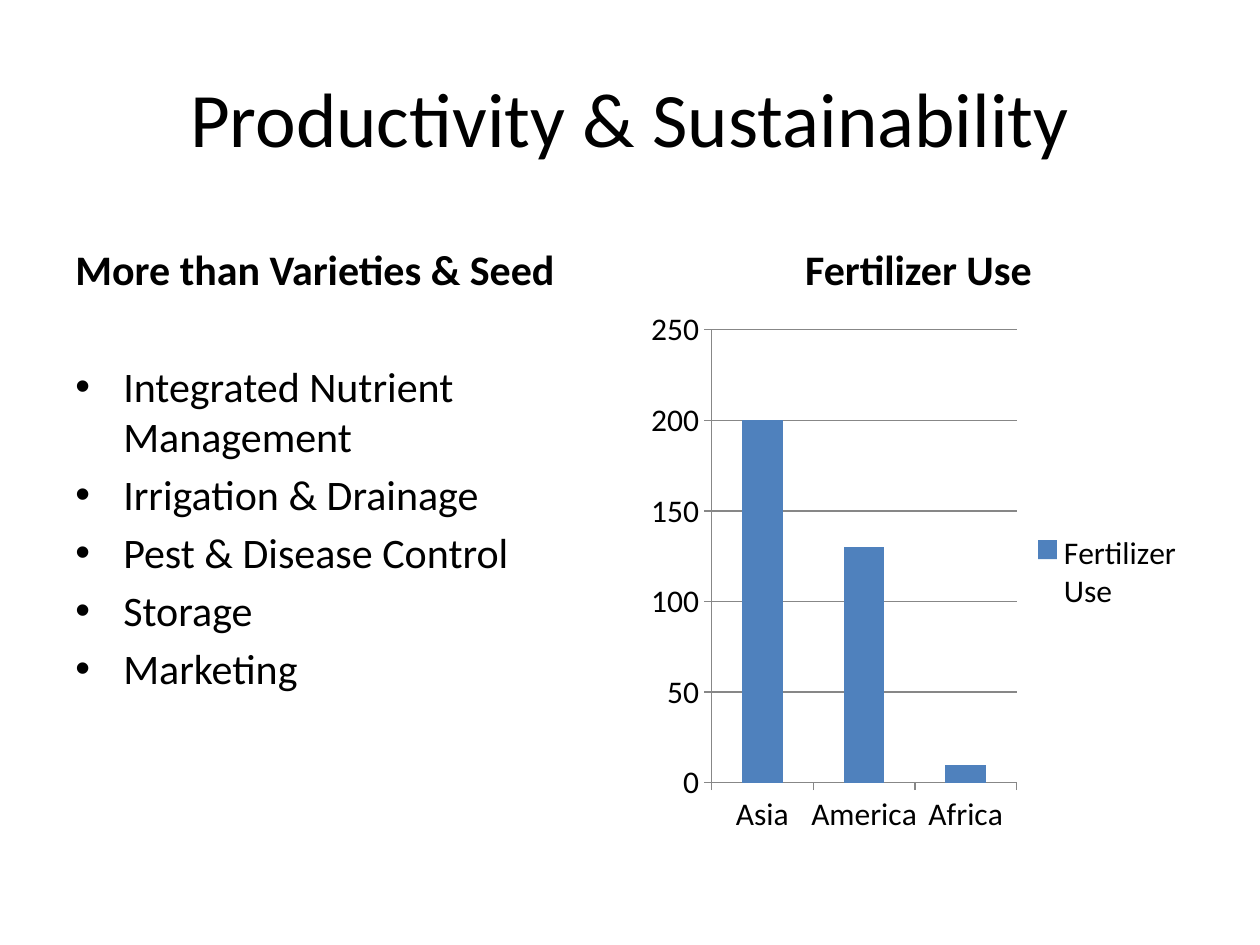
"""Build the slide on productivity and sustainability."""
from lxml import etree
from pptx import Presentation
from pptx.chart import data
from pptx.dml.color import RGBColor
from pptx.enum import chart as ce, text
from pptx.oxml.ns import qn
from pptx.util import Inches, Pt

FONT = "Calibri"
BLACK, GREY, BLUE = "000000", "878787", "4F81BD"
LEFT, RIGHT, COLUMN_WIDTH = 0.5, 5.08, 4.42
HEADING_TOP, HEADING_HEIGHT = 1.68, 0.7
CONTENT_TOP, CONTENT_HEIGHT = 2.38, 4.32
INDENT = 0.38
PRACTICES = [
    "Integrated Nutrient Management",
    "Irrigation & Drainage",
    "Pest & Disease Control",
    "Storage",
    "Marketing",
]
FERTILIZER_USE = {"Asia": 200, "America": 130, "Africa": 10}


def rgb(hex_code):
    """Return the colour for a hex string."""
    return RGBColor.from_string(hex_code)


def style_font(font, size, bold=False):
    """Apply the slide's typeface in black."""
    font.name, font.size, font.bold = FONT, Pt(size), bold
    font.color.rgb = rgb(BLACK)


def add_text(slide, box, lines, size, bold=False,
             align=text.PP_ALIGN.LEFT, anchor=text.MSO_ANCHOR.TOP):
    """Add a wrapped text box with one paragraph per line."""
    frame = slide.shapes.add_textbox(*map(Inches, box)).text_frame
    frame.word_wrap = True
    frame.vertical_anchor = anchor
    frame.text = "\n".join(lines)
    for paragraph in frame.paragraphs:
        paragraph.alignment = align
        for run in paragraph.runs:
            style_font(run.font, size, bold)
    return frame


def add_heading(slide, left, heading, align):
    """Add the bold heading of one column."""
    add_text(slide, (left, HEADING_TOP, COLUMN_WIDTH, HEADING_HEIGHT),
             [heading], 24, True, align, text.MSO_ANCHOR.BOTTOM)


def add_bullets(slide, box, items):
    """Add a bulleted list with hanging indents."""
    frame = add_text(slide, box, items, 24)
    frame.margin_top = Inches(0.48)
    for paragraph in frame.paragraphs:
        paragraph.space_before = Pt(4.3)
        properties = paragraph._p.get_or_add_pPr()
        properties.set("marL", str(Inches(INDENT)))
        properties.set("indent", str(-Inches(INDENT)))
        etree.SubElement(properties, qn("a:buFont"), typeface="Arial")
        etree.SubElement(properties, qn("a:buChar"), char="•")


def add_column_chart(slide, box, series_name, values):
    """Add a clustered column chart with a legend on the right."""
    chart_data = data.CategoryChartData()
    chart_data.categories = list(values)
    chart_data.add_series(series_name, list(values.values()))
    chart = slide.shapes.add_chart(
        ce.XL_CHART_TYPE.COLUMN_CLUSTERED, *map(Inches, box), chart_data).chart
    style_font(chart.font, 18)
    chart.has_title = False
    chart.has_legend = True
    chart.legend.position = ce.XL_LEGEND_POSITION.RIGHT
    chart.legend.include_in_layout = False

    plot = chart.plots[0]
    plot.gap_width = 150
    plot.vary_by_categories = False
    columns = plot.series[0].format.fill
    columns.solid()
    columns.fore_color.rgb = rgb(BLUE)

    value_axis = chart.value_axis
    value_axis.minimum_scale, value_axis.maximum_scale = 0, 250
    value_axis.major_unit = 50
    value_axis.has_major_gridlines = True
    for axis in (chart.category_axis, value_axis):
        axis.major_tick_mark = ce.XL_TICK_MARK.OUTSIDE
    for part in (chart.category_axis, value_axis, value_axis.major_gridlines):
        part.format.line.color.rgb = rgb(GREY)
        part.format.line.width = Pt(0.75)


def main():
    """Build and save the slide."""
    deck = Presentation()
    deck.slide_width, deck.slide_height = Inches(10), Inches(7.5)
    slide = deck.slides.add_slide(deck.slide_layouts[6])
    add_text(slide, (LEFT, 0.3, 9, 1.25), ["Productivity & Sustainability"], 44,
             align=text.PP_ALIGN.CENTER, anchor=text.MSO_ANCHOR.MIDDLE)
    add_heading(slide, LEFT, "More than Varieties & Seed", text.PP_ALIGN.LEFT)
    add_bullets(slide, (LEFT, CONTENT_TOP, COLUMN_WIDTH, CONTENT_HEIGHT), PRACTICES)
    add_heading(slide, RIGHT, "Fertilizer Use", text.PP_ALIGN.CENTER)
    add_column_chart(slide, (RIGHT, CONTENT_TOP, COLUMN_WIDTH, CONTENT_HEIGHT),
                     "Fertilizer Use", FERTILIZER_USE)
    deck.save("out.pptx")


if __name__ == "__main__":
    main()
